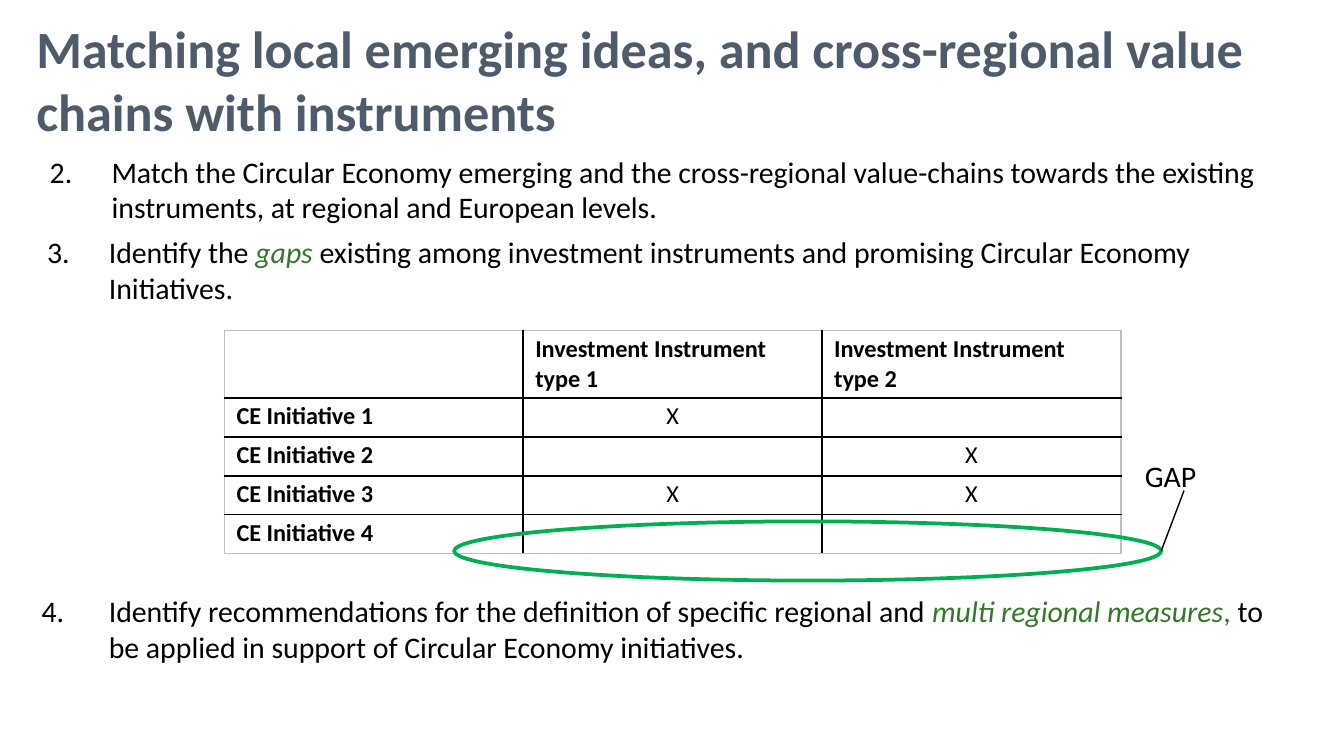
from lxml import etree
from pptx import Presentation
from pptx.dml.color import RGBColor
from pptx.enum import shapes, text
from pptx.oxml import ns
from pptx.util import Inches, Pt

COLORS = {"title": "4D5B6B", "text": "000000", "accent": "337828",
          "ring": "00B050", "edge": "BFBFBF"}
FONT = "Calibri"
MARGINS = ("margin_left", "margin_top", "margin_right", "margin_bottom")


def rgb(name):
    return RGBColor.from_string(COLORS[name])


def put(obj, values):
    for name, value in values.items():
        setattr(obj, name, value)


def place(sp, box):
    put(sp, dict(zip(("left", "top", "width", "height"), map(Inches, box))))


def frame(tf, margins, wrap=True):
    put(tf, dict(zip(MARGINS, map(Inches, margins))))
    put(tf, {"word_wrap": wrap, "auto_size": text.MSO_AUTO_SIZE.NONE,
             "vertical_anchor": text.MSO_ANCHOR.TOP})


def add_run(p, words, size, color="text", bold=False, italic=False):
    r = p.add_run()
    r.text = words
    put(r.font, {"name": FONT, "size": Pt(size), "bold": bold, "italic": italic})
    r.font.color.rgb = rgb(color)


def add_title(s, box, words):
    sp = s.shapes.title
    place(sp, box)
    frame(sp.text_frame, (0, 0, 0, 0))
    p = sp.text_frame.paragraphs[0]
    p.alignment = text.PP_ALIGN.LEFT
    add_run(p, words, 28, "title", bold=True)


def add_step(sp, box, number, indent, runs):
    place(sp, box)
    frame(sp.text_frame, (0.1, 0.05, 0.1, 0.05))
    p = sp.text_frame.paragraphs[0]
    put(p, {"alignment": text.PP_ALIGN.LEFT, "line_spacing": 1.0,
            "space_before": Pt(0), "space_after": Pt(0)})
    pPr = p._p.get_or_add_pPr()
    pPr.set("marL", str(Inches(indent)))
    pPr.set("indent", str(-Inches(indent)))
    etree.SubElement(pPr, ns.qn("a:buFont"), typeface=FONT)
    etree.SubElement(pPr, ns.qn("a:buAutoNum"), type="arabicPeriod", startAt=str(number))
    for words, *style in runs:
        add_run(p, words, 16, *style)


def set_borders(cell, colors):
    tcPr = cell._tc.get_or_add_tcPr()
    for i, (side, color) in enumerate(zip("LRTB", colors)):
        ln = etree.Element(ns.qn(f"a:ln{side}"), w=str(Pt(1)))
        fill = etree.SubElement(ln, ns.qn("a:solidFill"))
        etree.SubElement(fill, ns.qn("a:srgbClr"), val=COLORS[color])
        tcPr.insert(i, ln)


def add_matrix(s, box, rows):
    last_row, last_col = len(rows) - 1, len(rows[0]) - 1
    table = s.shapes.add_table(len(rows), len(rows[0]), *map(Inches, box)).table
    for col in table.columns:
        col.width = Inches(box[2] / len(rows[0]))
    for i, row in enumerate(rows):
        table.rows[i].height = Inches(0.29 if i else 0.5)
        for j, words in enumerate(row):
            cell = table.cell(i, j)
            put(cell, dict(zip(MARGINS, map(Inches, (0.09, 0.03, 0.09, 0.03)))))
            cell.fill.background()
            outer = (j == 0, j == last_col, i == 0, i == last_row)
            set_borders(cell, ["edge" if o else "text" for o in outer])
            p = cell.text_frame.paragraphs[0]
            if words:
                is_mark = words == "X"
                p.alignment = text.PP_ALIGN.CENTER if is_mark else text.PP_ALIGN.LEFT
                add_run(p, words, 13, bold=not is_mark)
            else:
                etree.SubElement(p._p, ns.qn("a:endParaRPr"), sz="1300")


def add_gap_callout(s, box):
    x, y, w, h = box
    ring_w, ring_h = 5.26, 0.44
    ring_top = y + h - ring_h
    ring = s.shapes.add_shape(shapes.MSO_SHAPE.OVAL,
                              *map(Inches, (x, ring_top, ring_w, ring_h)))
    ring.shadow.inherit = False
    ring.fill.background()
    ring.line.color.rgb = rgb("ring")
    ring.line.width = Pt(2)

    line = s.shapes.add_connector(
        shapes.MSO_CONNECTOR.STRAIGHT,
        *map(Inches, (x + ring_w, ring_top + ring_h / 2, x + 5.43, y + 0.29)))
    line.line.color.rgb = rgb("text")
    line.line.width = Pt(0.75)
    etree.SubElement(line._element.spPr, ns.qn("a:effectLst"))

    label = s.shapes.add_textbox(*map(Inches, (x + w - 0.59, y, 0.59, 0.37)))
    frame(label.text_frame, (0.1, 0.05, 0.1, 0.05), wrap=False)
    add_run(label.text_frame.paragraphs[0], "GAP", 16)


def main():
    prs = Presentation()
    put(prs, {"slide_width": Inches(10), "slide_height": Inches(10 * 9 / 16)})
    s = prs.slides.add_slide(prs.slide_layouts[4])
    bodies = {ph.placeholder_format.idx: ph for ph in s.placeholders}

    add_title(s, (0.27, 0.12, 9.57, 1.41),
              "Matching local emerging ideas, and cross-regional value chains with instruments")
    steps = [
        ((0.27, 1.09, 9.57, 0.91), 0.46,
         [("Match the Circular Economy emerging and the cross-regional value-chains "
           "towards the existing instruments, at regional and European levels.",)]),
        ((0.25, 1.69, 9.18, 0.64), 0.46,
         [("Identify the ",), ("gaps ", "accent", False, True),
          ("existing among investment instruments and promising Circular Economy "
           "Initiatives.",)]),
        ((0.21, 4.36, 9.36, 0.64), 0.5,
         [("Identify recommendations for the definition of specific regional and ",),
          ("multi regional measures", "accent", False, True), (", ", "accent"),
          ("to be applied in support of Circular Economy initiatives.",)]),
    ]
    for i, (box, indent, runs) in enumerate(steps, 1):
        add_step(bodies[i], box, i + 1, indent, runs)
    spare = bodies[4]._element
    spare.getparent().remove(spare)

    add_matrix(s, (1.67, 2.46, 6.67, 1.65), [
        ("", "Investment Instrument type 1", "Investment Instrument type 2"),
        ("CE Initiative 1", "X", ""),
        ("CE Initiative 2", "", "X"),
        ("CE Initiative 3", "X", "X"),
        ("CE Initiative 4", "", ""),
    ])
    add_gap_callout(s, (3.38, 3.36, 5.63, 0.96))
    prs.save("out.pptx")


if __name__ == "__main__":
    main()
